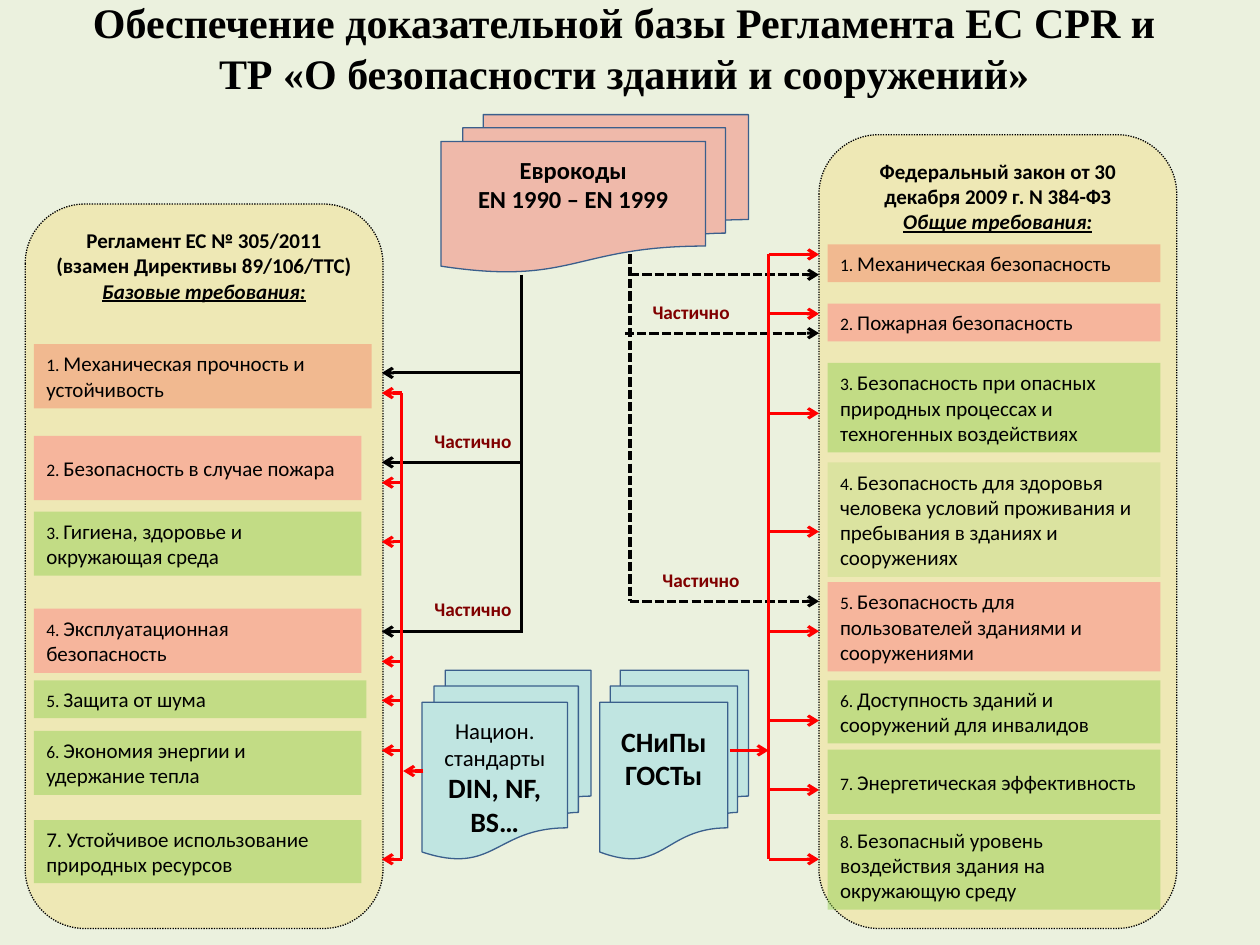
"""Build a slide comparing EU and Russian building regulations and their standards."""
import dataclasses

import pptx
import pptx.dml.color
import pptx.enum.dml
import pptx.enum.shapes
import pptx.enum.text
import pptx.oxml.ns
import pptx.util
from lxml import etree

Pt = pptx.util.Pt
RGB = pptx.dml.color.RGBColor.from_string
SHAPE = pptx.enum.shapes.MSO_SHAPE
ALIGN = pptx.enum.text.PP_ALIGN
ANCHOR = pptx.enum.text.MSO_ANCHOR
DASH = pptx.enum.dml.MSO_LINE
FIT = pptx.enum.text.MSO_AUTO_SIZE.SHAPE_TO_FIT_TEXT


@dataclasses.dataclass(frozen=True)
class Theme:
    background: str = "EBF1DE"
    black: str = "000000"
    red: str = "FF0000"
    maroon: str = "800000"
    outline: str = "3A5F8C"
    panel: tuple = ("FFC000", 18)
    euro: tuple = ("FF0000", 23)
    national: tuple = ("00B0F0", 18)
    orange: tuple = ("FF0000", 20)
    pink: tuple = ("FF7C80", 47)
    green: tuple = ("92D050", 47)
    pale: tuple = ("92D050", 20)
    font: str = "Calibri"
    title_font: str = "Times New Roman"
    title: float = 24
    strong: float = 16
    heading: float = 14
    standard: float = 13
    body: float = 12
    label: float = 11
    number: float = 10
    wire: float = 1.75


class Deck:
    def __init__(self, prs, theme):
        self.theme = theme
        self.slide = prs.slides.add_slide(prs.slide_layouts[6])
        fill = self.slide.background.fill
        fill.solid()
        fill.fore_color.rgb = RGB(theme.background)

    def fill_text(self, sp, paragraphs, align, anchor, color=None, font=None):
        tf = sp.text_frame
        tf.word_wrap = True
        tf.vertical_anchor = anchor
        for i, runs in enumerate(paragraphs):
            p = tf.add_paragraph() if i else tf.paragraphs[0]
            p.alignment = align
            for text, size, style in runs:
                r = p.add_run()
                r.text = text
                r.font.name = font or self.theme.font
                r.font.size = Pt(size)
                r.font.color.rgb = RGB(color or self.theme.black)
                r.font.bold = "b" in style
                r.font.italic = "i" in style
                r.font.underline = "u" in style
        return tf

    def shape(self, kind, box, fill):
        sp = self.slide.shapes.add_shape(kind, *map(Pt, box))
        sp.shadow.inherit = False
        sp.fill.solid()
        sp.fill.fore_color.rgb = RGB(fill[0])
        color = sp._element.spPr.find(".//" + pptx.oxml.ns.qn("a:srgbClr"))
        etree.SubElement(color, pptx.oxml.ns.qn("a:alpha"), val=str(fill[1] * 1000))
        return sp

    def panel(self, box, lines):
        sp = self.shape(SHAPE.FLOWCHART_ALTERNATE_PROCESS, box, self.theme.panel)
        sp.line.color.rgb = RGB(self.theme.black)
        sp.line.width = Pt(0.75)
        sp.line.dash_style = DASH.ROUND_DOT
        styles = ["b"] * (len(lines) - 1) + ["biu"]
        self.fill_text(sp, [[(text, self.theme.body, style)] for text, style in zip(lines, styles)],
                       ALIGN.CENTER, ANCHOR.TOP)
        return sp

    def item(self, box, fill, number, text, number_size=None):
        sp = self.shape(SHAPE.RECTANGLE, box, fill)
        sp.line.fill.background()
        runs = [(f"{number}. ", number_size or self.theme.number, ""), (text, self.theme.body, "")]
        self.fill_text(sp, [runs], ALIGN.LEFT, ANCHOR.MIDDLE).auto_size = FIT

    def documents(self, box, fill, paragraphs, before=0, bottom=3.6):
        sp = self.shape(SHAPE.FLOWCHART_MULTIDOCUMENT, box, fill)
        sp.line.color.rgb = RGB(self.theme.outline)
        sp.line.width = Pt(0)
        tf = self.fill_text(sp, paragraphs, ALIGN.CENTER, ANCHOR.MIDDLE)
        tf.margin_bottom = Pt(bottom)
        tf.paragraphs[0].space_before = Pt(before)

    def text(self, box, text, size, color, align, anchor, font=None):
        sp = self.slide.shapes.add_textbox(*map(Pt, box))
        self.fill_text(sp, [[(text, size, "b")]], align, anchor, color, font).auto_size = FIT

    def wire(self, start, end, color, dashed=False, arrow=True, target=None):
        line = self.slide.shapes.add_connector(
            pptx.enum.shapes.MSO_CONNECTOR.STRAIGHT, *map(Pt, (*start, *end)))
        if target is not None:
            line.end_connect(target, 1)
        line.line.color.rgb = RGB(color)
        line.line.width = Pt(self.theme.wire)
        if dashed:
            line.line.dash_style = DASH.SQUARE_DOT
        if arrow:
            ln = line._element.spPr.find(pptx.oxml.ns.qn("a:ln"))
            etree.SubElement(ln, pptx.oxml.ns.qn("a:tailEnd"), type="arrow")
        etree.SubElement(line._element.spPr, pptx.oxml.ns.qn("a:effectLst"))


def main():
    prs = pptx.Presentation()
    prs.slide_width, prs.slide_height = Pt(720), Pt(540)
    t = Theme()
    s = Deck(prs, t)

    s.panel((14.4, 116.6, 204.5, 414), [
        "Регламент ЕС № 305/2011", "(взамен Директивы 89/106/TTC)", "Базовые требования:"])
    law = s.panel((468, 77, 204.5, 453.6), [
        "Федеральный закон от 30 декабря 2009 г. N 384-ФЗ", "Общие требования:"])
    s.text((44.6, -5.8, 624.2, 65.5),
           "Обеспечение доказательной базы Регламента ЕС CPR и ТР «О безопасности зданий и сооружений»",
           t.title, t.black, ALIGN.CENTER, ANCHOR.MIDDLE, t.title_font)

    eu_items = [
        (196.6, 193, 36.7, t.orange, "Механическая прочность и устойчивость"),
        (249.1, 187.2, 36.7, t.pink, "Безопасность в случае пожара"),
        (292.3, 187.2, 36.7, t.green, "Гигиена, здоровье и окружающая среда"),
        (347.8, 187.2, 36.7, t.pink, "Эксплуатационная безопасность"),
        (388.8, 190.1, 21.6, t.green, "Защита от шума"),
        (417.6, 187.2, 36.7, t.green, "Экономия энергии и удержание тепла"),
        (468.7, 187.2, 36, t.green, "Устойчивое использование природных ресурсов"),
    ]
    for n, (top, width, height, fill, text) in enumerate(eu_items, 1):
        s.item((19.4, top, width, height), fill, n, text, t.body if n == len(eu_items) else None)

    law_items = [
        (139.7, 21.6, t.orange, "Механическая безопасность"),
        (173.5, 21.6, t.pink, "Пожарная безопасность"),
        (207.4, 51.1, t.green, "Безопасность при опасных природных процессах и техногенных воздействиях"),
        (264.2, 65.5, t.pale,
         "Безопасность для здоровья человека условий проживания и пребывания в зданиях и сооружениях"),
        (332.6, 51.1, t.pink, "Безопасность для пользователей зданиями и сооружениями"),
        (388.8, 36, t.green, "Доступность зданий и сооружений для инвалидов"),
        (428.4, 36.7, t.green, "Энергетическая эффективность"),
        (468.7, 51.1, t.green, "Безопасный уровень воздействия здания на окружающую среду"),
    ]
    for n, (top, height, fill, text) in enumerate(law_items, 1):
        s.item((473, top, 190.1, height), fill, n, text)

    s.documents((252, 65.5, 175.7, 90), t.euro, [
        [("Еврокоды", t.heading, "b")], [("EN 1990 – EN 1999", t.heading, "b")]], bottom=25.6)
    s.documents((342.7, 383, 85, 108), t.national, [
        [("СНиПы ГОСТы", t.strong, "b")]], before=3.6, bottom=25.6)
    s.documents((241.2, 383, 96.5, 108), t.national, [
        [("Национ. стандарты ", t.standard, ""), ("DIN, NF, BS…", t.strong, "b")]], before=3.6)

    s.wire((298, 157), (298, 361.5), t.black, arrow=False)
    for y in (213.1, 264.2, 360.9):
        s.wire((298, y), (218.2, y), t.black)
    s.wire((360, 145.4), (360, 343.6), t.black, dashed=True, arrow=False)
    for x, y in ((360, 157), (357.1, 190.4), (360, 343.6)):
        s.wire((x, y), (468, y), t.black, dashed=True)

    s.wire((229.7, 224.6), (229.7, 491), t.red, arrow=False)
    for y in (224.6, 275.8, 309.6, 378, 400.3, 428.8, 491):
        s.wire((229.7, y), (218.2, y), t.red)
    s.wire((439.2, 145.4), (439.2, 491), t.red, arrow=False)
    for y in (145.4, 179.3, 236.2, 303.8, 360.7, 411.8, 451.4, 491):
        s.wire((439.2, y), (468, y), t.red, target=law if y == 303.8 else None)
    s.wire((241.9, 440.6), (230.4, 440.6), t.red)
    s.wire((416.9, 428.8), (439.2, 428.8), t.red)

    for x, y in ((241.2, 337.7), (241.2, 241.9), (371.5, 321.1), (365.8, 167.8)):
        s.text((x, y, 62.6, 20.9), "Частично", t.label, t.maroon, ALIGN.LEFT, ANCHOR.TOP)

    prs.save("out.pptx")


if __name__ == "__main__":
    main()
